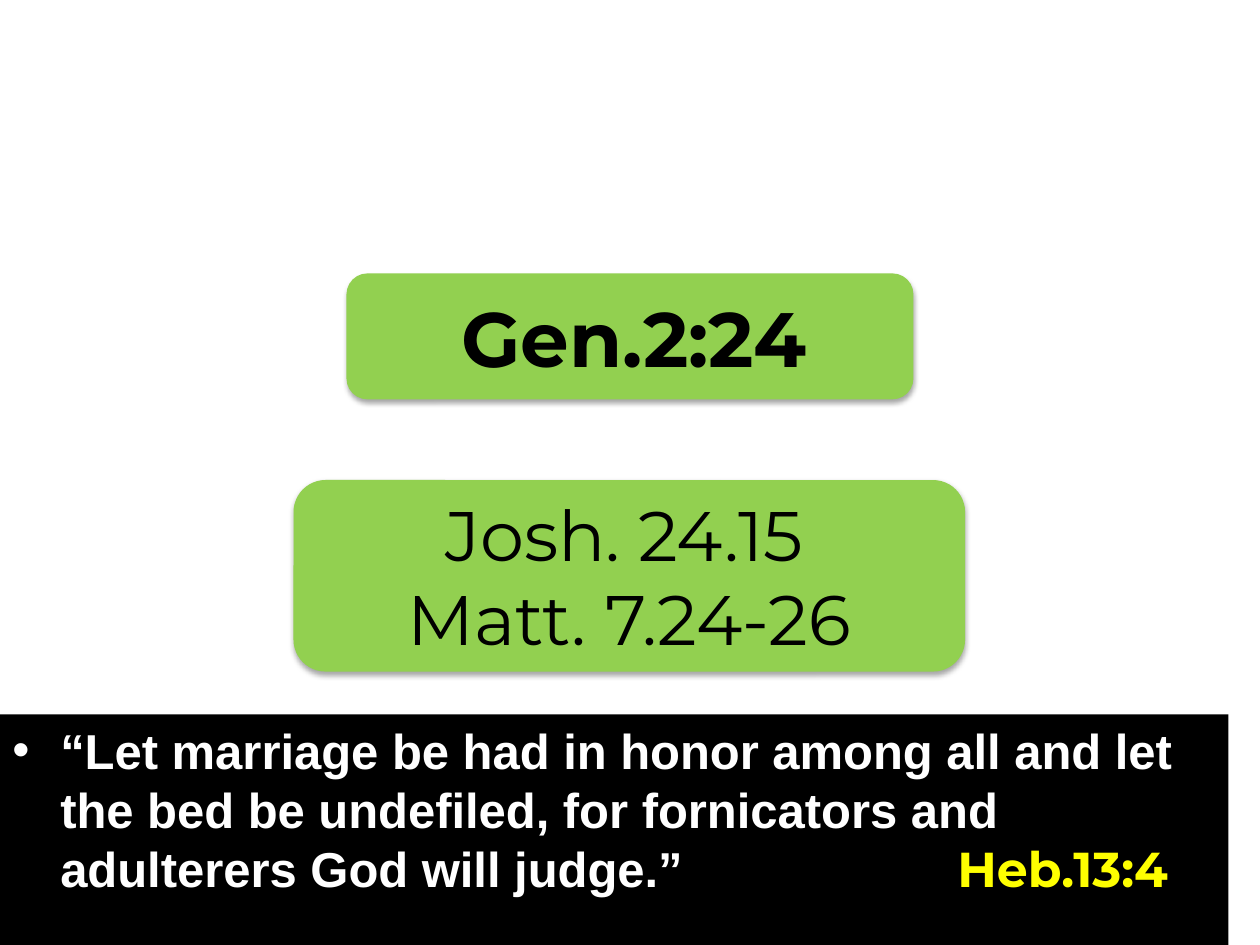
from lxml import etree
from pptx import Presentation
from pptx.dml.color import RGBColor
from pptx.enum.shapes import MSO_SHAPE
from pptx.enum.text import MSO_ANCHOR, PP_ALIGN
from pptx.oxml import parse_xml
from pptx.oxml.ns import qn
from pptx.util import Inches, Pt

RECT, ROUND = MSO_SHAPE.RECTANGLE, MSO_SHAPE.ROUNDED_RECTANGLE
TOP, MIDDLE = MSO_ANCHOR.TOP, MSO_ANCHOR.MIDDLE
LEFT, CENTER = PP_ALIGN.LEFT, PP_ALIGN.CENTER
GREEN, BLACK, WHITE, YELLOW = "92D050", "000000", "FFFFFF", "FFFF00"
SHADE = """<a:effectLst xmlns:a="http://schemas.openxmlformats.org/drawingml/2006/main">
<a:outerShdw blurRad="39370" dist="22860" dir="5400000" rotWithShape="0">
<a:srgbClr val="000000"><a:alpha val="35000"/></a:srgbClr>
</a:outerShdw></a:effectLst>"""
SPACE = {"size": Pt(18), "name": "Montserrat"}
HEAD = {"size": Pt(44), "name": "Montserrat", "bold": True}
REF = {"size": Pt(40), "name": "Montserrat"}
QUOTE = {"size": Pt(28), "name": "Arial", "bold": True}
CITE = {"size": Pt(28), "name": "Montserrat", "bold": True}


def color(code):
    return RGBColor.from_string(code)


def add_box(slide, kind, place, fill, anchor):
    box = slide.shapes.add_shape(kind, *map(Inches, place))
    box.shadow.inherit = False
    box.fill.solid()
    box.fill.fore_color.rgb = color(fill)
    box.line.fill.background()
    box.text_frame.word_wrap = True
    box.text_frame.vertical_anchor = anchor
    return box


def add_runs(para, align, runs):
    para.alignment = align
    for text, form, code in runs:
        run = para.add_run()
        run.text = text
        for key, value in form.items():
            setattr(run.font, key, value)
        run.font.color.rgb = color(code)


def add_card(slide, place, lines):
    box = add_box(slide, ROUND, place, GREEN, MIDDLE)
    props = box._element.spPr
    props.replace(props.find(qn("a:effectLst")), parse_xml(SHADE))
    frame = box.text_frame
    for i, runs in enumerate(lines):
        para = frame.add_paragraph() if i else frame.paragraphs[0]
        add_runs(para, CENTER, runs)


def add_verse(slide, place, runs, stop):
    box = add_box(slide, RECT, place, BLACK, TOP)
    para = box.text_frame.paragraphs[0]
    add_runs(para, LEFT, runs)
    para.space_before = Pt(5.6)
    props = para._p.get_or_add_pPr()
    indent = Inches(0.38)
    props.set("marL", str(indent))
    props.set("indent", str(-indent))
    etree.SubElement(props, qn("a:buFont"), typeface="Arial")
    etree.SubElement(props, qn("a:buChar"), char="•")
    tabs = etree.SubElement(props, qn("a:tabLst"))
    etree.SubElement(tabs, qn("a:tab"), pos=str(Inches(stop)), algn="l")


def main():
    deck = Presentation()
    deck.slide_width, deck.slide_height = Inches(10), Inches(7.5)
    slide = deck.slides.add_slide(deck.slide_layouts[6])
    verse = "“Let marriage be had in honor among all and let the bed be undefiled, for fornicators and adulterers God will judge.”\t"
    add_verse(slide, (0, 5.67, 9.75, 1.83),
              [(verse, QUOTE, WHITE), ("Heb.13:4", CITE, YELLOW)], 7.5)
    lead = (" ", SPACE, WHITE)
    add_card(slide, (2.75, 2.17, 4.5, 1), [[lead, ("Gen.2:24", HEAD, BLACK)]])
    add_card(slide, (2.33, 3.81, 5.33, 1.52),
             [[lead, ("Josh. 24.15 ", REF, BLACK)],
              [("Matt. 7.24-26", REF, BLACK)]])
    deck.save("out.pptx")


if __name__ == "__main__":
    main()
